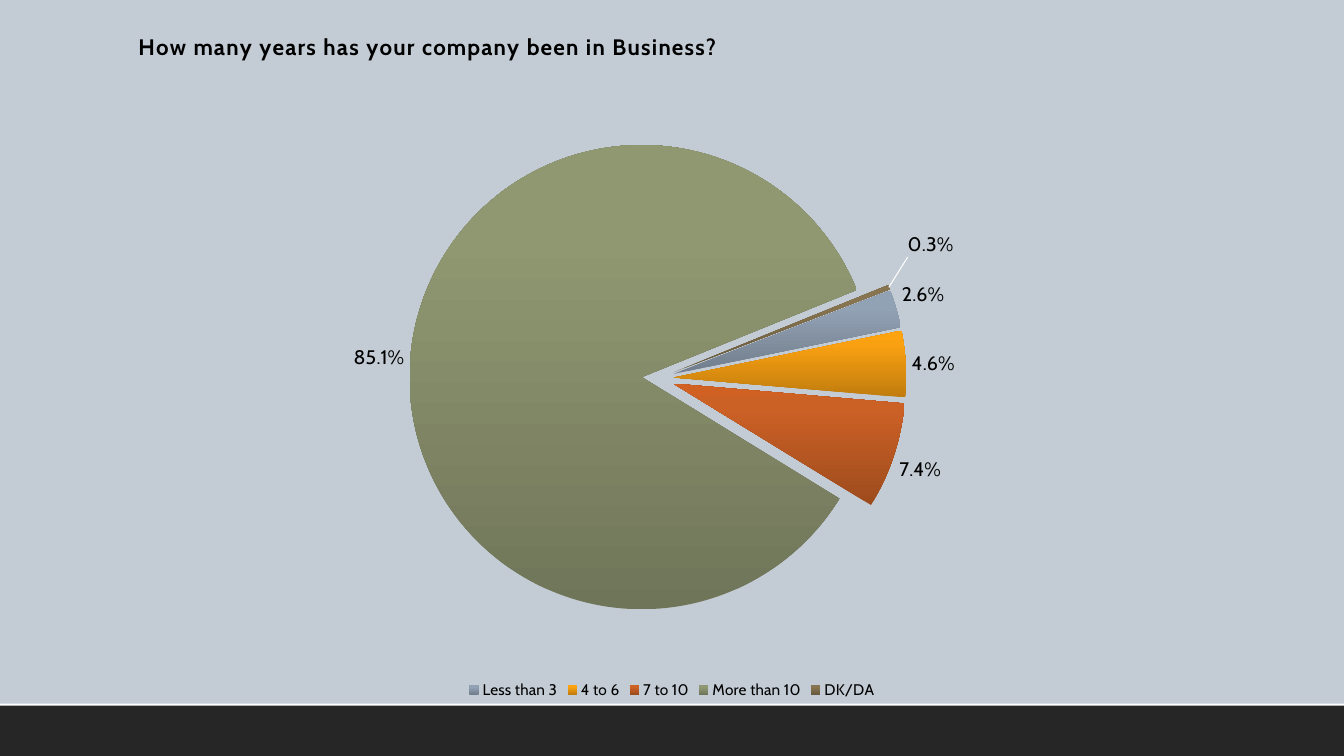
from lxml import etree
from pptx import Presentation
from pptx.chart.data import CategoryChartData
from pptx.dml.color import RGBColor
from pptx.enum.chart import XL_CHART_TYPE, XL_LABEL_POSITION, XL_LEGEND_POSITION
from pptx.enum.shapes import MSO_SHAPE
from pptx.oxml import parse_xml
from pptx.oxml.ns import qn
from pptx.util import Cm, Pt

PIE = XL_CHART_TYPE.PIE
OUTSIDE = XL_LABEL_POSITION.OUTSIDE_END
BOTTOM = XL_LEGEND_POSITION.BOTTOM
RECT = MSO_SHAPE.RECTANGLE

FONT = "Cabin"
COLORS = {"page": "FFFFFF", "panel": "C3CBD4", "band": "262626",
          "text": "000000", "leader": "FFFFFF"}
NS = ('xmlns:c="http://schemas.openxmlformats.org/drawingml/2006/chart" '
      'xmlns:a="http://schemas.openxmlformats.org/drawingml/2006/main"')

# Category, percentage, gradient stops at 0, 80 and 100 percent
YEARS = [
    ("Less than 3", 2.6, ("717D8C", "92A2B5", "92A3B7")),
    ("4 to 6", 4.6, ("C07C0E", "FAA112", "FFA30E")),
    ("7 to 10", 7.4, ("9D4B1D", "CC6126", "D06123")),
    ("More than 10", 85.1, ("6F7558", "909872", "919972")),
    ("DK/DA", 0.3, ("685A3D", "877450", "89754F")),
]


def xml(tag, body="", attrs=""):
    return parse_xml(f"<{tag} {NS} {attrs}>{body}</{tag}>")


def solid(color):
    return f'<a:solidFill><a:srgbClr val="{color}"/></a:solidFill>'


def gradient(stops):
    gs = "".join(f'<a:gs pos="{pos * 1000}"><a:srgbClr val="{color}"/></a:gs>'
                 for pos, color in zip((0, 80, 100), stops))
    return xml("a:gradFill", f'<a:gsLst>{gs}</a:gsLst><a:lin ang="16200000" scaled="0"/>')


def layout(x, y, size=None, inner=False, mode="edge"):
    parts = '<c:layoutTarget val="inner"/>' if inner else ""
    if mode == "edge":
        parts += '<c:xMode val="edge"/><c:yMode val="edge"/>'
    parts += f'<c:x val="{x}"/><c:y val="{y}"/>'
    if size:
        parts += f'<c:w val="{size[0]}"/><c:h val="{size[1]}"/>'
    return f"<c:layout {NS}><c:manualLayout>{parts}</c:manualLayout></c:layout>"


def drop(parent, tag):
    for el in parent.findall(qn(tag)):
        parent.remove(el)


def style_font(font, size, color=COLORS["text"], bold=False):
    font.name, font.size, font.bold = FONT, Pt(size), bold
    font.color.rgb = RGBColor.from_string(color)


def write(tf, text, size=14, bold=False, spacing=0):
    tf.text = text
    r = tf.paragraphs[0].runs[0]
    style_font(r.font, size, bold=bold)
    r.font._element.set("spc", str(spacing))


class Deck:
    def __init__(self, width, height):
        self.prs = Presentation()
        self.prs.slide_width, self.prs.slide_height = Cm(width), Cm(height)
        self.s = self.prs.slides.add_slide(self.prs.slide_layouts[6])
        self.fill(self.s.background, COLORS["page"])

    def fill(self, target, color):
        target.fill.solid()
        target.fill.fore_color.rgb = RGBColor.from_string(color)

    def band(self, x, y, w, h, color):
        sp = self.s.shapes.add_shape(RECT, Cm(x), Cm(y), Cm(w), Cm(h))
        sp.shadow.inherit = False
        self.fill(sp, color)
        sp.line.fill.background()

    def pie(self, x, y, w, h, title, rows, start, explode):
        data = CategoryChartData(number_format="0.0")
        data.categories = [name for name, _, _ in rows]
        data.add_series("Series 1", [value for _, value, _ in rows])
        chart = self.s.shapes.add_chart(PIE, Cm(x), Cm(y), Cm(w), Cm(h), data).chart
        style_font(chart.font, 10)
        root = chart.element.find(qn("c:chart"))
        root.addnext(xml("c:spPr", solid(COLORS["panel"]) + "<a:ln><a:noFill/></a:ln>"))

        # Title
        chart.has_title = True
        write(chart.chart_title.text_frame, title, size=16, bold=True, spacing=100)
        head = root.find(qn("c:title"))
        drop(head, "c:layout")
        head.find(qn("c:tx")).addnext(parse_xml(layout(0.1, 0.04)))

        # Legend
        chart.has_legend = True
        chart.legend.position = BOTTOM
        chart.legend.include_in_layout = False
        style_font(chart.legend.font, 11)

        # Plot area and slices
        area = root.find(qn("c:plotArea"))
        drop(area, "c:layout")
        area.insert(0, parse_xml(layout(0.233, 0.185, (0.513, 0.706), inner=True)))
        plot = chart.plots[0]
        plot.vary_by_categories = True
        pie = area.find(qn("c:pieChart"))
        drop(pie, "c:firstSliceAng")
        etree.SubElement(pie, qn("c:firstSliceAng")).set("val", str(start))
        ser = pie.find(qn("c:ser"))
        ser.find(qn("c:tx")).addnext(xml("c:explosion", attrs=f'val="{explode}"'))
        for i, (_, _, stops) in enumerate(rows):
            self.fill(plot.series[0].points[i].format, stops[1])
        for point, (_, _, stops) in zip(ser.findall(qn("c:dPt")), rows):
            sp_pr = point.find(qn("c:spPr"))
            sp_pr.replace(sp_pr.find(qn("a:solidFill")), gradient(stops))

        # Percentage labels
        labels = plot.series[0].data_labels
        labels.show_percentage, labels.show_value = True, False
        labels.number_format, labels.number_format_is_linked = "0.0%", False
        labels.position = OUTSIDE
        style_font(labels.font, 14)
        self.move_label(ser.find(qn("c:dLbls")), len(rows) - 1, 0.01, -0.04)

    def move_label(self, labels, idx, dx, dy):
        flags = "".join(f'<c:show{name} val="{int(name == "Percent")}"/>' for name in
                        ("LegendKey", "Val", "CatName", "SerName", "Percent", "BubbleSize"))
        labels.insert(0, xml("c:dLbl", f'<c:idx val="{idx}"/>{layout(dx, dy, mode="factor")}'
                             f'<c:dLblPos val="outEnd"/>{flags}'))
        drop(labels, "c:showLeaderLines")
        labels.append(xml("c:showLeaderLines", attrs='val="1"'))
        labels.append(xml("c:leaderLines", f'<c:spPr><a:ln w="9525">{solid(COLORS["leader"])}'
                          "</a:ln></c:spPr>"))


def main():
    deck = Deck(33.87, 19.05)
    # Bottom band
    deck.band(0, 17.78, 33.87, 1.27, COLORS["band"])
    # Survey chart
    deck.pie(0, 0, 33.87, 17.73, "How many years has your company been in Business?",
             YEARS, start=69, explode=7)
    deck.prs.save("out.pptx")


if __name__ == "__main__":
    main()
